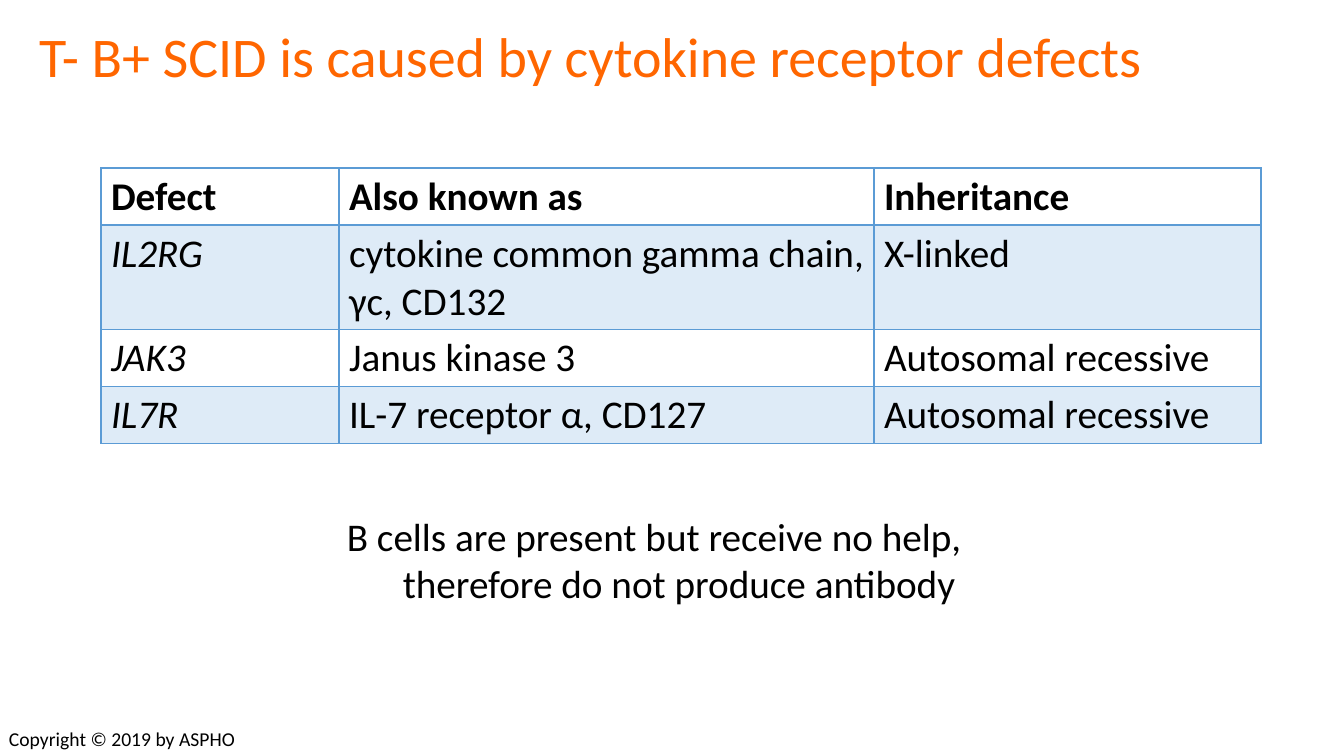
import lxml.etree
import pptx
import pptx.dml.color
import pptx.enum.text
import pptx.oxml.ns
import pptx.util

ALIGN = pptx.enum.text.PP_ALIGN
ANCHOR = pptx.enum.text.MSO_ANCHOR
AUTO_SIZE = pptx.enum.text.MSO_AUTO_SIZE

SLIDE_WIDTH, SLIDE_HEIGHT = 1344, 756
EMU_PER_PX = 12192000 / SLIDE_WIDTH

ORANGE = "FF6600"
BLACK = "000000"
BORDER_BLUE = "5B9BD5"
BAND_BLUE = "DEEBF7"

COLUMN_WIDTHS = [238, 535, 387]
ROW_HEIGHTS = [57, 104, 57, 57]
DEFECTS = [
    ["Defect", "Also known as", "Inheritance"],
    ["IL2RG", "cytokine common gamma chain, γc, CD132", "X-linked"],
    ["JAK3", "Janus kinase 3", "Autosomal recessive"],
    ["IL7R", "IL-7 receptor α, CD127", "Autosomal recessive"],
]


def px(length):
    return pptx.util.Emu(round(length * EMU_PER_PX))


def rgb(color):
    return pptx.dml.color.RGBColor.from_string(color)


def write(frame, text, size=28, color=BLACK, bold=False, italic=False,
          align=ALIGN.LEFT, line_spacing=1.0, hanging=0):
    """Fill a text frame with one formatted paragraph."""
    paragraph = frame.paragraphs[0]
    paragraph.alignment = align
    paragraph.line_spacing = line_spacing
    if hanging:
        properties = paragraph._p.get_or_add_pPr()
        properties.set("marL", str(px(hanging)))
        properties.set("indent", str(-px(hanging)))
    run = paragraph.add_run()
    run.text = text
    font = run.font
    font.name = "Calibri"
    font.size = pptx.util.Pt(size)
    font.bold = bold
    font.italic = italic
    font.color.rgb = rgb(color)


def add_title(slide, text):
    title = slide.shapes.title
    title.left, title.top, title.width, title.height = map(px, (29, 17, 1281, 84))
    frame = title.text_frame
    frame.auto_size = AUTO_SIZE.NONE
    frame.vertical_anchor = ANCHOR.MIDDLE
    write(frame, text, size=40, color=ORANGE, line_spacing=0.9)


def add_text(slide, box, text, **text_format):
    frame = slide.shapes.add_textbox(*map(px, box)).text_frame
    frame.word_wrap = True
    write(frame, text, **text_format)


def add_border(cell, side, width):
    properties = cell._tc.get_or_add_tcPr()
    line = lxml.etree.SubElement(properties, pptx.oxml.ns.qn(f"a:ln{side}"),
                                 w=str(pptx.util.Pt(width)))
    fill = lxml.etree.SubElement(line, pptx.oxml.ns.qn("a:solidFill"))
    lxml.etree.SubElement(fill, pptx.oxml.ns.qn("a:srgbClr"), val=BORDER_BLUE)


def add_defect_table(slide, left, top):
    table = slide.shapes.add_table(
        len(DEFECTS), len(COLUMN_WIDTHS), px(left), px(top),
        px(sum(COLUMN_WIDTHS)), px(sum(ROW_HEIGHTS))).table
    table.first_row = False
    table.horz_banding = False
    for column, width in zip(table.columns, COLUMN_WIDTHS):
        column.width = px(width)
    for row, height in zip(table.rows, ROW_HEIGHTS):
        row.height = px(height)

    for row_index, entries in enumerate(DEFECTS):
        is_header = row_index == 0
        for column_index, entry in enumerate(entries):
            cell = table.cell(row_index, column_index)
            for side in "LRTB":
                below_header = (row_index, side) in [(0, "B"), (1, "T")]
                add_border(cell, side, 2 if below_header else 1)
            if row_index % 2:
                cell.fill.solid()
                cell.fill.fore_color.rgb = rgb(BAND_BLUE)
            else:
                cell.fill.background()
            write(cell.text_frame, entry, bold=is_header,
                  italic=column_index == 0 and not is_header)


def main():
    presentation = pptx.Presentation()
    presentation.slide_width = px(SLIDE_WIDTH)
    presentation.slide_height = px(SLIDE_HEIGHT)
    title_only = presentation.slide_layouts[5]
    slide = presentation.slides.add_slide(title_only)

    add_title(slide, "T- B+ SCID is caused by cytokine receptor defects")
    add_text(slide, (281, 507, 746, 105),
             "B cells are present but receive no help, "
             "therefore do not produce antibody",
             align=ALIGN.CENTER, hanging=50)
    add_defect_table(slide, 101, 168)
    add_text(slide, (-1, 722, 250, 34), "Copyright © 2019 by ASPHO", size=14)

    presentation.save("out.pptx")


if __name__ == "__main__":
    main()
